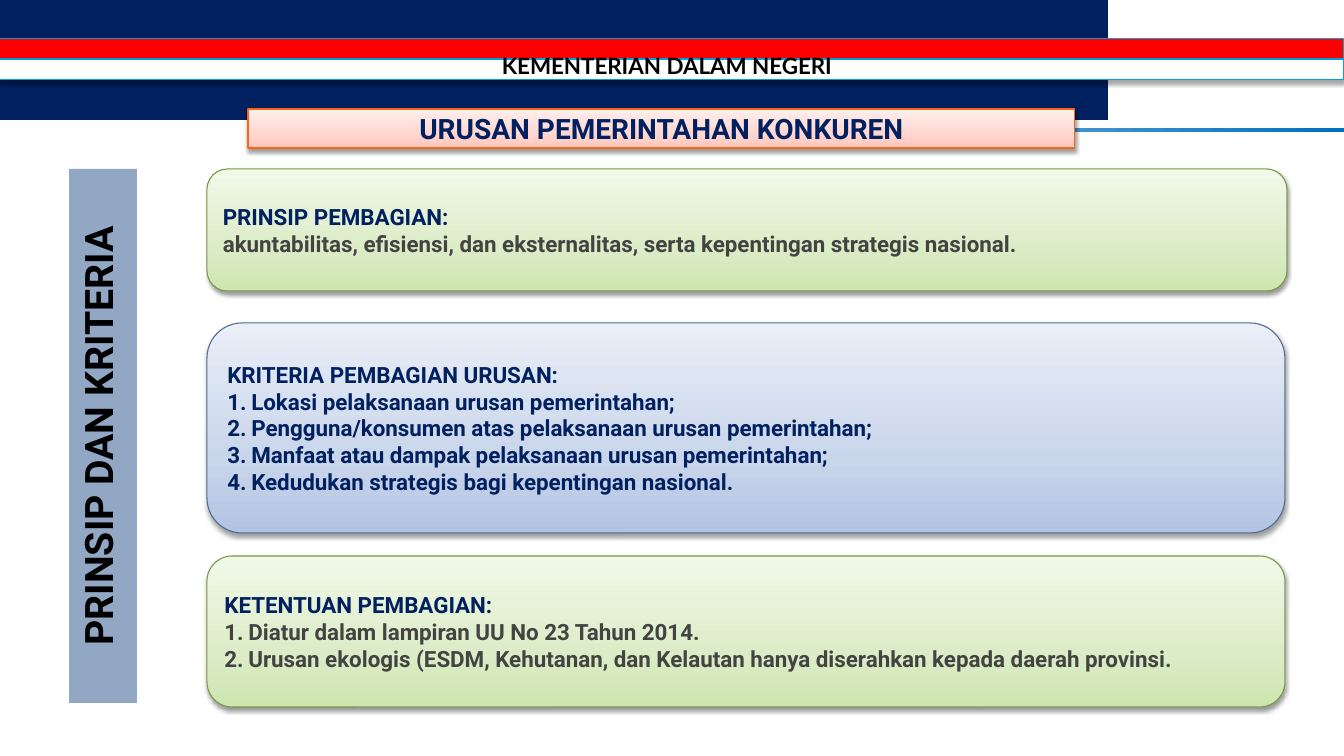
from lxml.etree import SubElement
from pptx import Presentation
from pptx.dml.color import RGBColor
from pptx.enum.shapes import MSO_SHAPE
from pptx.enum.text import MSO_ANCHOR, MSO_AUTO_SIZE, PP_ALIGN
from pptx.oxml.ns import qn
from pptx.util import Emu, Pt

HUES = {
    "navy": "002060", "gray": "434342", "black": "000000", "white": "FFFFFF",
    "red": "FF0000", "sky": "03A0D9", "steel": "91A7C4",
    "orange": "F96615", "olive": "7A9746", "slate": "4D6B92",
}
FADES = {
    "blush": [(0, "FFC5BA"), (35, "FFD6CF"), (100, "FFEFED")],
    "green": [(0, "CDE6AF"), (35, "DCECC7"), (100, "F1F9E9")],
    "blue": [(0, "B2C3E3"), (35, "C9D5EA"), (100, "EAEFF8")],
    "strip": [(0, "0070C0"), (78, "FFFFFF"), (100, "FFFFFF")],
}


def px(size):
    return Emu(round(size * 914400 / 100.8))


def node(home, tag, **attrs):
    return SubElement(home, qn("a:" + tag), {k: str(v) for k, v in attrs.items()})


class Board:
    def __init__(self, slide, font):
        self.slide, self.font = slide, font

    def place(self, shape, box):
        shape.left, shape.top, shape.width, shape.height = map(px, box)
        self.slide.shapes._spTree.append(shape._element)

    def fade(self, shape, name, angle):
        shape.fill.gradient()
        shape.fill.gradient_angle = angle
        stops = shape._element.spPr.find(".//" + qn("a:gsLst"))
        for old in list(stops):
            stops.remove(old)
        for pos, hue in FADES[name]:
            node(node(stops, "gs", pos=pos * 1000), "srgbClr", val=hue)

    def edge(self, shape, hue):
        if hue:
            shape.line.color.rgb = RGBColor.from_string(HUES[hue])
            shape.line.width = Pt(0.75)
        else:
            shape.line.fill.background()

    def shade(self, shape, alpha, dist):
        shape.shadow.inherit = False
        glow = node(shape._element.spPr.find(qn("a:effectLst")), "outerShdw",
                    blurRad=40000, dist=dist, dir=5400000, rotWithShape=0)
        node(node(glow, "srgbClr", val=HUES["black"]), "alpha", val=alpha * 1000)

    def bar(self, box, hue, line=None):
        shape = self.slide.shapes.add_shape(MSO_SHAPE.RECTANGLE, *map(px, box))
        shape.shadow.inherit = False
        if hue in FADES:
            self.fade(shape, hue, 180)
        else:
            shape.fill.solid()
            shape.fill.fore_color.rgb = RGBColor.from_string(HUES[hue])
        self.edge(shape, line)
        return shape

    def card(self, box, fade, line, holder=None):
        shape = holder
        if holder is None:
            shape = self.slide.shapes.add_shape(MSO_SHAPE.ROUNDED_RECTANGLE, *map(px, box))
        self.place(shape, box)
        if holder is not None:
            node(node(shape._element.spPr, "prstGeom", prst="roundRect"), "avLst")
        self.fade(shape, fade, 90)
        self.edge(shape, line)
        self.shade(shape, 38, 20000)
        return shape

    def label(self, shape, rows, size, align, anchor=MSO_ANCHOR.MIDDLE, font=None):
        """Each row is text, colour and whether it is numbered."""
        frame = shape.text_frame
        frame.word_wrap = True
        frame.auto_size = MSO_AUTO_SIZE.NONE
        frame.vertical_anchor = anchor
        for i, (text, hue, count) in enumerate(rows):
            para = frame.add_paragraph() if i else frame.paragraphs[0]
            props = para._p.get_or_add_pPr()
            hang = px(24) if count else 0
            props.set("marL", str(hang))
            props.set("indent", str(-hang))
            if count:
                node(props, "buFont", typeface="+mj-lt")
                node(props, "buAutoNum", type="arabicPeriod")
            else:
                node(props, "buNone")
            para.alignment = align
            para.space_before = Pt(0)
            run = para.add_run()
            run.text = text
            run.font.name = font or self.font
            run.font.size = Pt(size)
            run.font.bold = True
            run.font.color.rgb = RGBColor.from_string(HUES[hue])
        return frame


def main():
    deck = Presentation()
    deck.slide_width, deck.slide_height = px(1344), px(756)
    slide = deck.slides.add_slide(deck.slide_layouts[3])
    board = Board(slide, "Roboto")
    title, first, second = slide.placeholders

    # Backdrop
    board.bar((0, 128, 1344, 4), "strip")
    board.bar((-2, 0, 1110, 120), "navy")

    # Title
    card = board.card((248, 109, 827, 39), "blush", "orange", title)
    board.label(card, [("URUSAN PEMERINTAHAN KONKUREN", "navy", False)],
                20, PP_ALIGN.CENTER)

    # Side label
    side = board.bar((69, 169, 68, 534), "steel")
    frame = board.label(side, [("PRINSIP DAN KRITERIA", "black", False)],
                        28, PP_ALIGN.CENTER, MSO_ANCHOR.TOP)
    frame._txBody.bodyPr.set("vert", "vert270")

    # Cards
    cards = [
        ((207, 169, 1080, 122), "green", "olive", None, "PRINSIP PEMBAGIAN:", "gray", [
            "akuntabilitas, efisiensi, dan eksternalitas, serta kepentingan strategis nasional."]),
        ((207, 323, 1078, 210), "blue", "slate", first, "KRITERIA PEMBAGIAN URUSAN:", "navy", [
            "Lokasi pelaksanaan urusan pemerintahan;",
            "Pengguna/konsumen atas pelaksanaan urusan pemerintahan;",
            "Manfaat atau dampak pelaksanaan urusan pemerintahan;",
            "Kedudukan strategis bagi kepentingan nasional."]),
        ((207, 556, 1078, 151), "green", "olive", second, "KETENTUAN PEMBAGIAN:", "gray", [
            "Diatur dalam lampiran UU No 23 Tahun 2014.",
            "Urusan ekologis (ESDM, Kehutanan, dan Kelautan hanya diserahkan "
            "kepada daerah provinsi."]),
    ]
    for box, fade, line, holder, head, hue, items in cards:
        rows = [(head, "navy", False)]
        rows += [(item, hue, holder is not None) for item in items]
        board.label(board.card(box, fade, line, holder), rows, 16, PP_ALIGN.JUSTIFY)

    # Flag band
    for top, hue in ((39, "red"), (60, "white")):
        board.shade(board.bar((-2, top, 1346, 20), hue, "sky"), 35, 23000)
    name = slide.shapes.add_textbox(*map(px, (326, 50, 682, 42)))
    frame = board.label(name, [("KEMENTERIAN DALAM NEGERI", "black", False)],
                        16, PP_ALIGN.CENTER, MSO_ANCHOR.TOP, "Lato")
    frame.paragraphs[0].line_spacing = 0.9

    deck.save("out.pptx")


if __name__ == "__main__":
    main()
